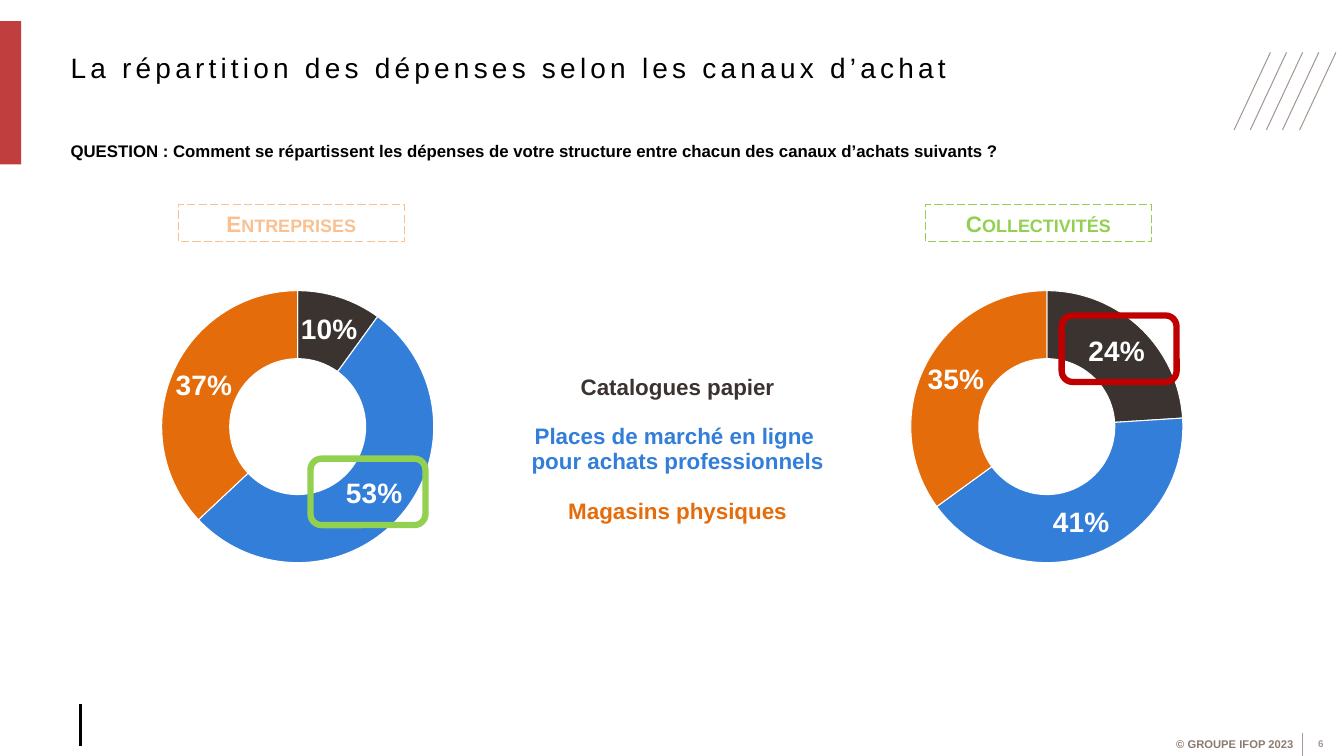
from lxml.etree import SubElement
from pptx import Presentation
from pptx.chart.data import CategoryChartData
from pptx.dml.color import RGBColor
from pptx.enum.chart import XL_CHART_TYPE
from pptx.enum.dml import MSO_LINE
from pptx.enum.shapes import MSO_CONNECTOR, MSO_SHAPE
from pptx.enum.text import MSO_ANCHOR, MSO_AUTO_SIZE, PP_ALIGN
from pptx.oxml.ns import qn
from pptx.util import Pt

# Content
TITLE = "La répartition des dépenses selon les canaux d’achat"
QUESTION = ("QUESTION : Comment se répartissent les dépenses de votre structure "
            "entre chacun des canaux d’achats suivants\u00a0?")
CREDIT, PAGE = "© GROUPE IFOP 2023", "6"
LEGEND = [
    ("Catalogues papier", "dark", 56),
    ("Places de marché en ligne \npour achats professionnels", "blue", 67),
    ("Magasins physiques", "orange", 56),
]
# name, colour, label left, chart left, shares
GROUPS = [
    ("Entreprises", "peach", 177, 20, (10, 53, 37)),
    ("Collectivités", "green", 918, 763, (24, 41, 35)),
]
# left, top, colour of the frames around key values
FRAMES = [(1053, 313, "crimson"), (308, 455, "green")]

COLORS = {
    "black": "000000", "white": "FFFFFF", "red": "B20E10", "crimson": "C00000",
    "dark": "3B3330", "blue": "327ED9", "orange": "E46C0A",
    "peach": "FAC090", "green": "92D050",
    "taupe": "A59891", "brown": "8B7A6F",
}
PX = 9144  # 100 px to the inch
FONT = "Arial"


def px(*nums):
    return [n * PX for n in nums]


def color(name):
    return RGBColor.from_string(COLORS[name])


def style(font, size, tint, bold=True):
    font.name, font.size, font.bold = FONT, Pt(size), bold
    font.color.rgb = color(tint)


def write(frame, text, size, tint, align, bold=True):
    frame.text = text
    for para in frame.paragraphs:
        para.alignment = align
        for run in para.runs:
            style(run.font, size, tint, bold)


def add_line(x1, y1, x2, y2, tint, width):
    line = slide.shapes.add_connector(MSO_CONNECTOR.STRAIGHT, *px(x1, y1, x2, y2))
    line.line.color.rgb, line.line.width = color(tint), Pt(width)
    SubElement(line.element.spPr, qn("a:effectLst"))


def add_box(kind, box, tint, width):
    shape = slide.shapes.add_shape(kind, *px(*box))
    shape.shadow.inherit = False
    shape.fill.background()
    shape.line.color.rgb, shape.line.width = color(tint), Pt(width)
    return shape


def add_note(box, text, size, tint, align):
    frame = slide.shapes.add_textbox(*px(*box)).text_frame
    frame.word_wrap = True
    write(frame, text, size, tint, align)


def add_table(left, top, width, heights):
    box = px(left, top, width, sum(heights))
    table = slide.shapes.add_table(len(heights), 1, *box).table
    table.first_row = table.horz_banding = False
    for row, height in zip(table.rows, heights):
        row.height = height * PX
        row.cells[0].fill.background()
        row.cells[0].vertical_anchor = MSO_ANCHOR.MIDDLE
    return table


def add_ring(left, shares):
    data = CategoryChartData()
    data.categories = ["1", "2", "3"]
    data.add_series("Series 1", shares)
    chart = slide.shapes.add_chart(
        XL_CHART_TYPE.DOUGHNUT, *px(left, 243, 573, 442), data).chart
    chart.has_legend = chart.has_title = False
    style(chart.font, 18, "black", False)

    series = chart.plots[0].series[0]
    for i, (_, tint, _) in enumerate(LEGEND):
        look = series.points[i].format
        look.fill.solid()
        look.fill.fore_color.rgb = color(tint)
        look.line.color.rgb, look.line.width = color("white"), Pt(0.75)
    labels = series.data_labels
    labels.show_value = True
    labels.number_format, labels.number_format_is_linked = '0"%"', False
    style(labels.font, 20, "white")

    # Fixed inner plot area
    area = chart.element.find(".//" + qn("c:plotArea"))
    for old in area.findall(qn("c:layout")):
        area.remove(old)
    layout = SubElement(area, qn("c:layout"))
    area.insert(0, layout)
    manual = SubElement(layout, qn("c:manualLayout"))
    for tag, val in (("layoutTarget", "inner"), ("xMode", "edge"),
                     ("yMode", "edge"), ("x", "0.245"), ("y", "0.062"),
                     ("w", "0.471"), ("h", "0.692")):
        SubElement(manual, qn("c:" + tag)).set("val", val)


deck = Presentation()
deck.slide_width, deck.slide_height = px(1333, 750)
slide = deck.slides.add_slide(deck.slide_layouts[5])

# Footer
add_note((1120, 727, 173, 24), CREDIT, 8, "brown", PP_ALIGN.RIGHT)
add_note((1287, 727, 46, 23), PAGE, 7, "taupe", PP_ALIGN.CENTER)
add_line(1292, 727, 1292, 750, "taupe", 0.75)
add_line(80, 698, 80, 740, "black", 2.25)

# Red bar and hatching
bar = add_box(MSO_SHAPE.RECTANGLE, (0, 21, 21, 142), "red", 0.75)
bar.line.fill.background()
bar.fill.solid()
bar.fill.fore_color.rgb = color("red")
tone = bar.element.spPr.find(qn("a:solidFill"))[0]
SubElement(tone, qn("a:alpha")).set("val", "80000")
for i in range(5):
    x = 1260 + 65 * i // 4
    add_line(x, 52, x - 36, 129, "taupe", 0.75)

# Title
title = slide.shapes.title
title.left, title.top, title.width, title.height = px(60, 21, 1157, 91)
frame = title.text_frame
frame.word_wrap, frame.auto_size = True, MSO_AUTO_SIZE.NONE
frame.vertical_anchor = MSO_ANCHOR.MIDDLE
write(frame, TITLE, 20, "black", PP_ALIGN.LEFT, False)
frame.paragraphs[0].runs[0].font._element.set("spc", "300")

# Question
ask = add_table(60, 135, 1157, (31, 40))
write(ask.cell(0, 0).text_frame, QUESTION, 12, "black", PP_ALIGN.JUSTIFY)

# Group labels and rings
for name, tint, left, ring, shares in GROUPS:
    box = add_box(MSO_SHAPE.RECTANGLE, (left, 203, 224, 37), tint, 0.75)
    box.line.dash_style = MSO_LINE.LONG_DASH
    write(box.text_frame, name, 16, tint, PP_ALIGN.CENTER)
    box.text_frame.paragraphs[0].runs[0].font._element.set("cap", "small")
    add_ring(ring, shares)

# Legend between the rings
key = add_table(485, 356, 374, [height for _, _, height in LEGEND])
for i, (text, tint, _) in enumerate(LEGEND):
    cell = key.cell(i, 0)
    cell.margin_left, cell.margin_right, cell.margin_top, cell.margin_bottom = px(1, 1, 1, 0)
    write(cell.text_frame, text, 16, tint, PP_ALIGN.CENTER)

# Frames around key values
for left, top, tint in FRAMES:
    add_box(MSO_SHAPE.ROUNDED_RECTANGLE, (left, top, 114, 66), tint, 4.5)

deck.save("out.pptx")
